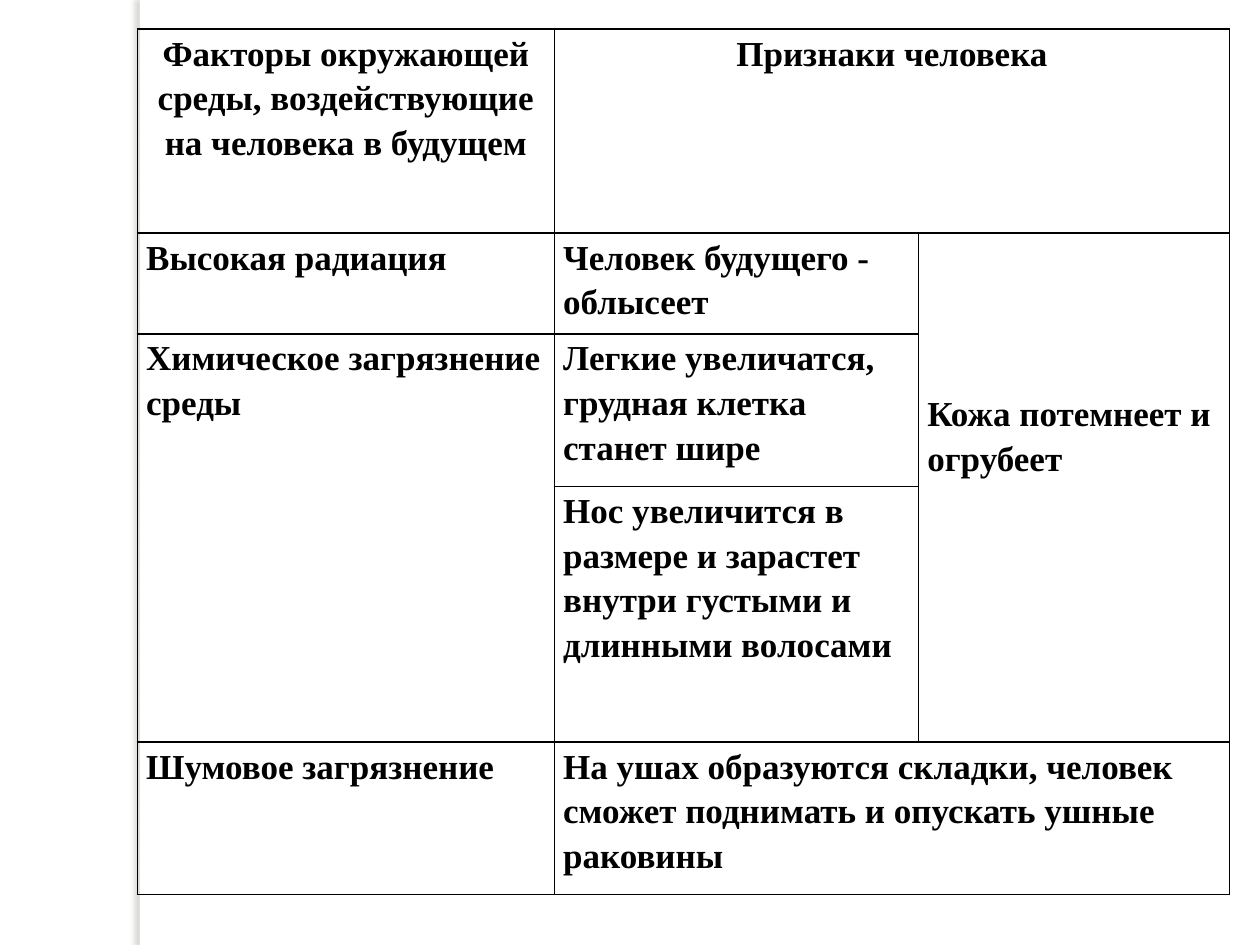
from lxml import etree
from pptx import Presentation
from pptx.dml.color import RGBColor
from pptx.enum.shapes import MSO_SHAPE
from pptx.enum.text import PP_ALIGN
from pptx.oxml import parse_xml
from pptx.oxml.ns import nsdecls, qn
from pptx.util import Inches, Pt

RECT = MSO_SHAPE.RECTANGLE
LEFT, CENTER = PP_ALIGN.LEFT, PP_ALIGN.CENTER
FONT = "Times New Roman"
BLACK, WHITE, SHADE = "000000", "FFFFFF", "736F63"

COLS = [3.31, 2.89, 2.47]
ROWS = [1.62, 0.8, 1.21, 2.03, 1.21]
# row, column, rows spanned, columns spanned, text, alignment, top margin
CELLS = [
    (0, 0, 1, 1, "Факторы окружающей среды, воздействующие на человека в будущем", CENTER, 0),
    (0, 1, 1, 2, "Признаки человека", CENTER, 0),
    (1, 0, 1, 1, "Высокая радиация", LEFT, 0),
    (1, 1, 1, 1, "Человек будущего - облысеет", LEFT, 0),
    (1, 2, 3, 1, "Кожа потемнеет и огрубеет", LEFT, 1.24),
    (2, 0, 2, 1, "Химическое загрязнение среды", LEFT, 0),
    (2, 1, 1, 1, "Легкие увеличатся, грудная клетка станет шире", LEFT, 0),
    (3, 1, 1, 1, "Нос увеличится в размере и зарастет внутри густыми и длинными волосами", LEFT, 0),
    (4, 0, 1, 1, "Шумовое загрязнение", LEFT, 0),
    (4, 1, 1, 2, "На ушах образуются складки, человек сможет поднимать и опускать ушные раковины",
     LEFT, 0),
]


def color(code):
    return RGBColor.from_string(code)


def add_strip(slide, x, y, w, h):
    """White side strip with a soft shadow to its left."""
    strip = slide.shapes.add_shape(RECT, Inches(x), Inches(y), Inches(w), Inches(h))
    strip.fill.solid()
    strip.fill.fore_color.rgb = color(WHITE)
    strip.line.fill.background()
    strip.shadow.inherit = False
    effects = strip.element.spPr.find(qn("a:effectLst"))
    effects.append(parse_xml(
        f'<a:outerShdw {nsdecls("a")} blurRad="{Pt(3)}" dist="{Pt(3)}" dir="10800000">'
        f'<a:srgbClr val="{SHADE}"><a:alpha val="25000"/></a:srgbClr></a:outerShdw>'))


def style_cell(cell):
    """Plain cell with thin black borders."""
    cell.margin_left = cell.margin_right = Inches(0.07)
    cell.margin_top = cell.margin_bottom = 0
    cell.fill.background()
    props = cell._tc.get_or_add_tcPr()
    for i, side in enumerate(("lnL", "lnR", "lnT", "lnB")):
        line = etree.Element(qn(f"a:{side}"), w=str(Pt(1)))
        fill = etree.SubElement(line, qn("a:solidFill"))
        etree.SubElement(fill, qn("a:srgbClr"), val=BLACK)
        props.insert(i, line)


def write(cell, text, align):
    cell.text_frame.text = text
    para = cell.text_frame.paragraphs[0]
    para.alignment = align
    para.line_spacing = 1.15
    font = para.runs[0].font
    font.name = FONT
    font.size = Pt(20)
    font.bold = True
    font.color.rgb = color(BLACK)


def add_grid(slide, x, y):
    """Table of environmental factors and human traits."""
    frame = slide.shapes.add_table(len(ROWS), len(COLS), Inches(x), Inches(y),
                                   Inches(sum(COLS)), Inches(sum(ROWS)))
    table = frame.table
    table.first_row = table.horz_banding = False
    for col, width in zip(table.columns, COLS):
        col.width = Inches(width)
    for row, height in zip(table.rows, ROWS):
        row.height = Inches(height)
    for cell in table.iter_cells():
        style_cell(cell)
    for r, c, down, across, text, align, top in CELLS:
        cell = table.cell(r, c)
        if down * across > 1:
            cell.merge(table.cell(r + down - 1, c + across - 1))
        cell.margin_top = Inches(top)
        write(cell, text, align)


def main():
    prs = Presentation()
    prs.slide_width, prs.slide_height = Inches(10), Inches(7.5)
    slide = prs.slides.add_slide(prs.slide_layouts[6])
    slide.background.fill.solid()
    slide.background.fill.fore_color.rgb = color(WHITE)
    add_strip(slide, 1.11, 0, 0.08, 7.5)
    add_grid(slide, 1.09, 0.23)
    prs.save("out.pptx")


if __name__ == "__main__":
    main()
